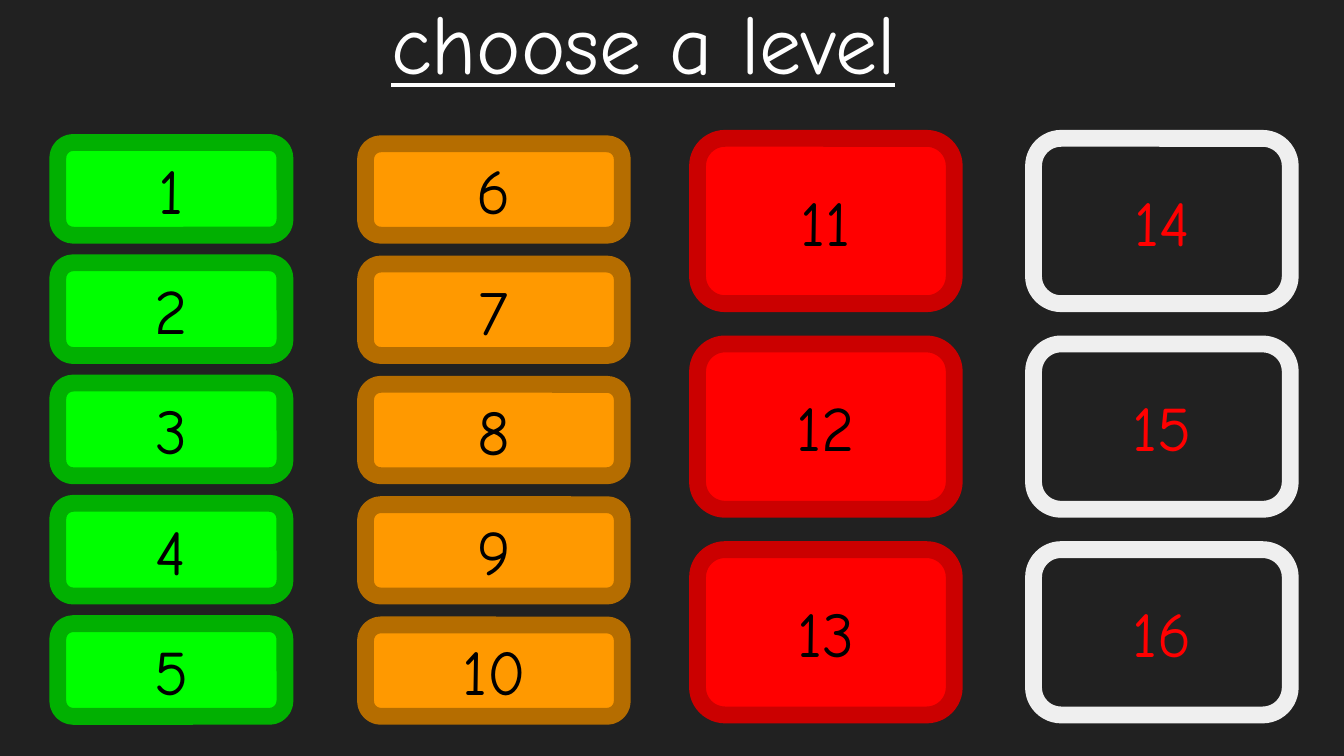
import pptx
import pptx.dml.color
import pptx.enum.shapes
import pptx.enum.text
import pptx.util

FONT = "Comic Neue"
BACKGROUND = "212121"
SLIDE_WIDTH = 10
SLIDE_HEIGHT = SLIDE_WIDTH * 9 / 16
TITLE = "choose a level"
TITLE_BOX = (2.81, -0.17, 5.3, 0.96)

# Each column spreads its levels evenly from the first top to the last top.
COLUMNS = [
    dict(levels=range(1, 6), left=0.43, tops=(1.06, 4.64), size=(1.69, 0.69),
         fill="00FF00", border="01B001", ink="000000"),
    dict(levels=range(6, 11), left=2.72, tops=(1.07, 4.65), size=(1.91, 0.68),
         fill="FF9900", border="B56D00", ink="000000"),
    dict(levels=range(11, 14), left=5.19, tops=(1.03, 4.09), size=(1.91, 1.23),
         fill="FF0000", border="CB0000", ink="000000"),
    dict(levels=range(14, 17), left=7.69, tops=(1.03, 4.09), size=(1.91, 1.23),
         fill=BACKGROUND, border="EFEFEF", ink="FF0000"),
]


def color(value):
    return pptx.dml.color.RGBColor.from_string(value)


def write(shape, text, size, ink, align, anchor, underline=False):
    frame = shape.text_frame
    frame.word_wrap = True
    frame.auto_size = pptx.enum.text.MSO_AUTO_SIZE.NONE
    frame.vertical_anchor = anchor
    inset = pptx.util.Inches(0.1)
    frame.margin_left = frame.margin_right = inset
    frame.margin_top = frame.margin_bottom = inset
    para = frame.paragraphs[0]
    para.alignment = align
    span = para.add_run()
    span.text = text
    span.font.name = FONT
    span.font.size = pptx.util.Pt(size)
    span.font.underline = underline
    span.font.color.rgb = color(ink)


def add_title(page):
    title = page.shapes.title
    title.left, title.top, title.width, title.height = map(pptx.util.Inches, TITLE_BOX)
    write(title, TITLE, size=45, ink="FFFFFF", underline=True,
          align=pptx.enum.text.PP_ALIGN.LEFT, anchor=pptx.enum.text.MSO_ANCHOR.TOP)


def add_button(page, level, top, column):
    box = (column["left"], top, *column["size"])
    button = page.shapes.add_shape(
        pptx.enum.shapes.MSO_SHAPE.ROUNDED_RECTANGLE, *map(pptx.util.Inches, box))
    button.shadow.inherit = False
    button.fill.solid()
    button.fill.fore_color.rgb = color(column["fill"])
    button.line.color.rgb = color(column["border"])
    button.line.width = pptx.util.Pt(9)
    write(button, str(level), size=34, ink=column["ink"],
          align=pptx.enum.text.PP_ALIGN.CENTER, anchor=pptx.enum.text.MSO_ANCHOR.MIDDLE)


def main():
    deck = pptx.Presentation()
    deck.slide_width = pptx.util.Inches(SLIDE_WIDTH)
    deck.slide_height = pptx.util.Inches(SLIDE_HEIGHT)
    page = deck.slides.add_slide(deck.slide_layouts.get_by_name("Title Only"))
    page.background.fill.solid()
    page.background.fill.fore_color.rgb = color(BACKGROUND)

    add_title(page)
    for column in COLUMNS:
        first, last = column["tops"]
        pitch = (last - first) / (len(column["levels"]) - 1)
        for row, level in enumerate(column["levels"]):
            add_button(page, level, first + row * pitch, column)

    deck.save("out.pptx")


if __name__ == "__main__":
    main()
